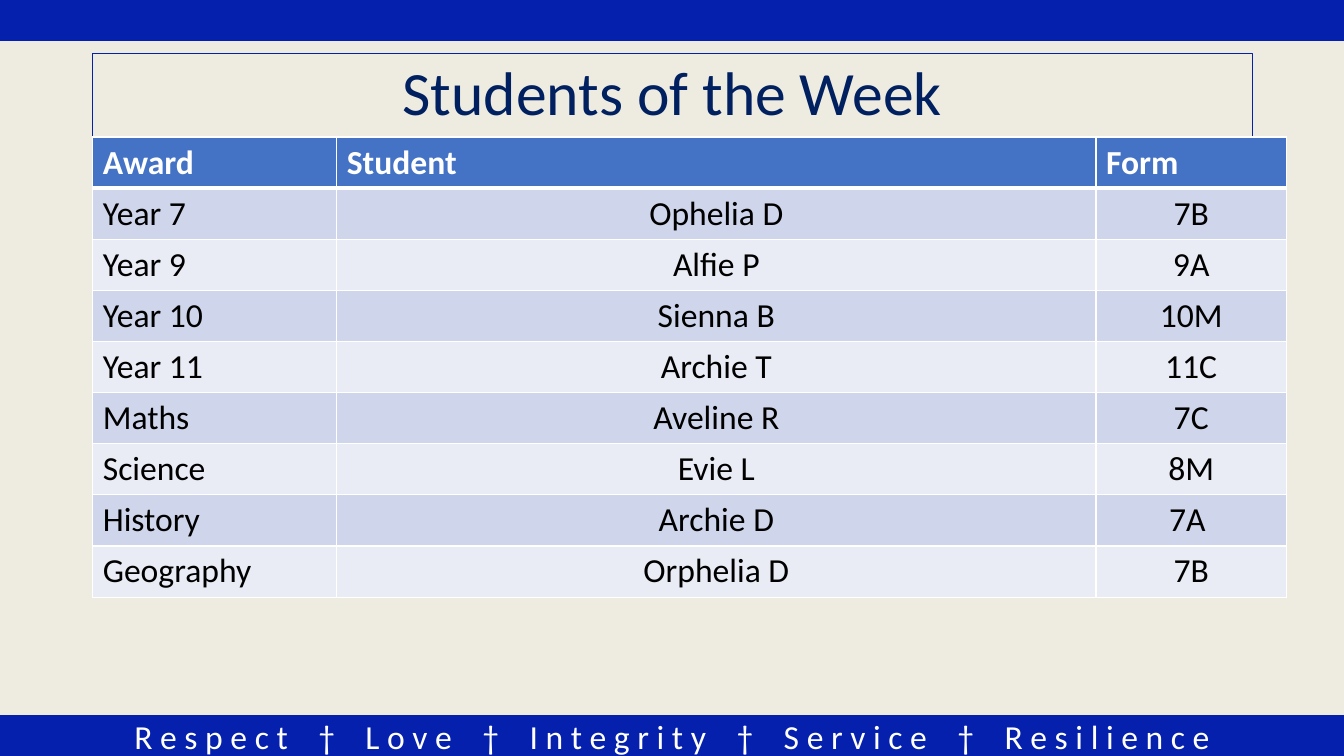
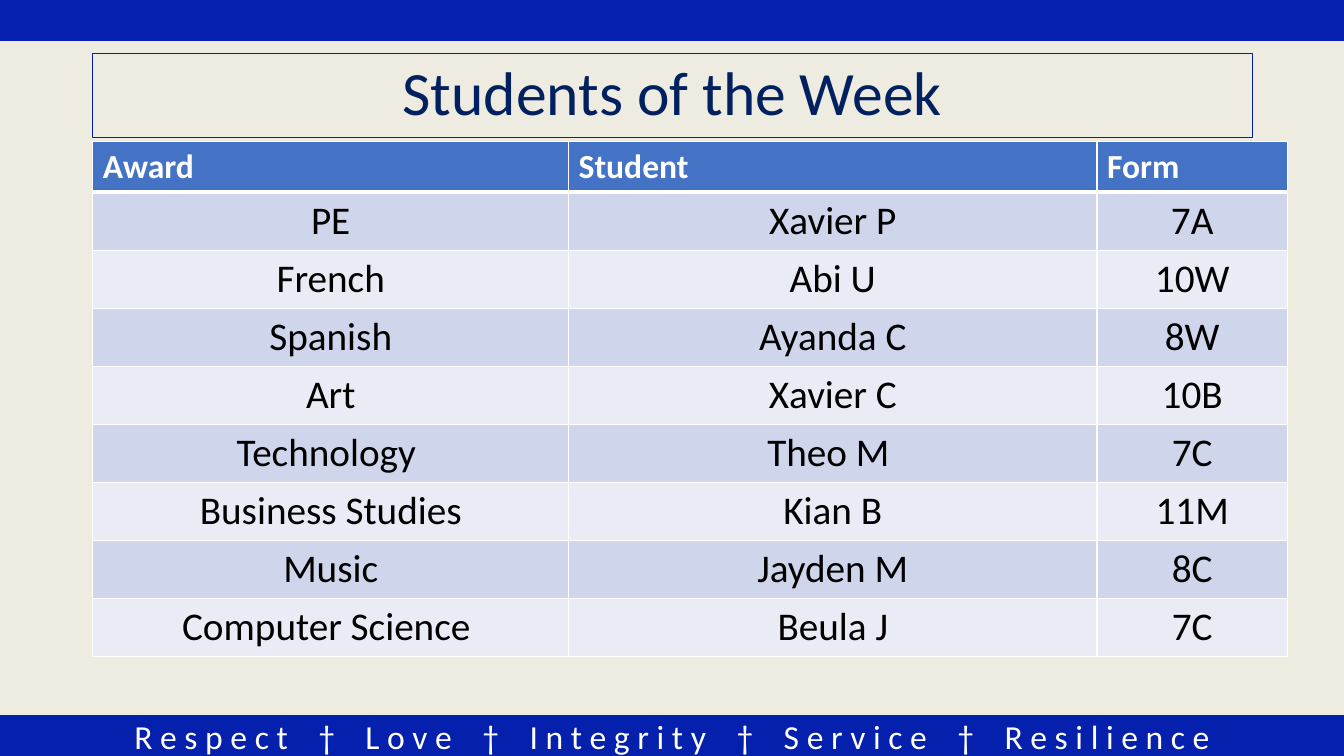
from dataclasses import dataclass

from lxml import etree
from pptx import Presentation
from pptx.dml.color import RGBColor
from pptx.enum.shapes import MSO_SHAPE
from pptx.enum.text import MSO_ANCHOR, MSO_AUTO_SIZE, PP_ALIGN
from pptx.oxml.ns import qn
from pptx.util import Inches, Pt

RECTANGLE = MSO_SHAPE.RECTANGLE
TOP, MIDDLE, BOTTOM = MSO_ANCHOR.TOP, MSO_ANCHOR.MIDDLE, MSO_ANCHOR.BOTTOM
LEFT, CENTER = PP_ALIGN.LEFT, PP_ALIGN.CENTER
TITLE_ONLY = 5

# Content
VALUES = ["Respect", "Love", "Integrity", "Service", "Resilience"]
TITLE = "Students of the Week"
HEADINGS = ("Award", "Student", "Form")
AWARD_SLIDES = [
    {
        "top": 1.36, "columns": (2.42, 7.53, 1.89), "row_height": 0.5,
        "size": 24, "award_align": LEFT,
        "winners": [
            ("Year 7", "Ophelia D", "7B"),
            ("Year 9", "Alfie P", "9A"),
            ("Year 10", "Sienna B", "10M"),
            ("Year 11", "Archie T", "11C"),
            ("Maths", "Aveline R", "7C"),
            ("Science", "Evie L", "8M"),
            ("History", "Archie D", "7A "),
            ("Geography", "Orphelia D", "7B"),
        ],
    },
    {
        "top": 1.4, "columns": (4.72, 5.24, 1.89), "row_height": 0.57,
        "size": 28, "award_align": CENTER,
        "winners": [
            ("PE", "Xavier P", "7A"),
            ("French", "Abi U", "10W"),
            ("Spanish", "Ayanda C", "8W"),
            ("Art", "Xavier C", "10B"),
            ("Technology ", "Theo M ", "7C"),
            ("Business Studies", "Kian B", "11M"),
            ("Music", "Jayden M", "8C"),
            ("Computer Science ", "Beula J", "7C"),
        ],
    },
]


@dataclass(frozen=True)
class Theme:
    font: str = "Calibri"
    background: str = "EEECE1"
    band: str = "0420AC"
    title: str = "002060"
    header: str = "4472C4"
    stripes: tuple = ("CFD5EA", "E9EBF5")
    light: str = "FFFFFF"
    dark: str = "000000"
    title_size: int = 44
    header_size: int = 24
    values_size: int = 24
    values_gap: int = 1630  # extra hundredths of a point beside each dagger


THEME = Theme()
SLIDE_WIDTH, SLIDE_HEIGHT = 13.33, 7.5
BAND_HEIGHT = 0.4
MARGIN_LEFT = 0.92
HEADER_HEIGHT = 0.5
WINNER_CELL = {
    "vertical_anchor": BOTTOM,
    "margin_left": Inches(0.01), "margin_top": Inches(0.01),
    "margin_right": Inches(0.01), "margin_bottom": Inches(0.05),
}


def rgb(color):
    return RGBColor.from_string(color)


def apply(target, values):
    for name, value in values.items():
        setattr(target, name, value)


def style_font(font, size, color, bold=False):
    apply(font, {"name": THEME.font, "size": Pt(size), "bold": bold})
    font.color.rgb = rgb(color)


def paint(fill, color):
    fill.solid()
    fill.fore_color.rgb = rgb(color)


def add_band(slide, layout, top):
    """Draw a full-width band and hand it over to the shared layout."""
    band = slide.shapes.add_shape(RECTANGLE, 0, Inches(top),
                                  Inches(SLIDE_WIDTH), Inches(BAND_HEIGHT))
    band.shadow.inherit = False
    paint(band.fill, THEME.band)
    paint(band.line.fill, THEME.band)
    band.line.width = Pt(1)
    layout.shapes.element.append(band.element)
    return band


def write_values(band):
    band.text_frame.vertical_anchor = MIDDLE
    line = band.text_frame.paragraphs[0]
    line.alignment = CENTER
    spaced_words = [" ".join(word) for word in VALUES]
    pieces = [spaced_words[0]]
    for word in spaced_words[1:]:
        pieces += [" ", "†", " ", word]
    for piece in pieces:
        run = line.add_run()
        run.text = piece
        style_font(run.font, THEME.values_size, THEME.light)
    # Widen the single spaces on both sides of each dagger
    for run in band.element.iter(qn("a:r")):
        if run.find(qn("a:t")).text == " ":
            run.find(qn("a:rPr")).set("spc", str(THEME.values_gap))


def add_title(slide):
    title = slide.shapes.title
    apply(title, {"left": Inches(MARGIN_LEFT), "top": Inches(0.53),
                  "width": Inches(11.5), "height": Inches(0.83)})
    paint(title.line.fill, THEME.band)
    title.line.width = Pt(0.75)
    title.text = TITLE
    apply(title.text_frame, {"vertical_anchor": MIDDLE, "word_wrap": True,
                             "auto_size": MSO_AUTO_SIZE.NONE})
    line = title.text_frame.paragraphs[0]
    apply(line, {"alignment": CENTER, "line_spacing": 0.9})
    style_font(line.runs[0].font, THEME.title_size, THEME.title)


def add_borders(cell, top, bottom):
    properties = cell._tc.get_or_add_tcPr()
    for side, width in (("L", 1), ("R", 1), ("T", top), ("B", bottom)):
        border = etree.SubElement(properties, qn(f"a:ln{side}"), w=str(Pt(width)))
        fill = etree.SubElement(border, qn("a:solidFill"))
        etree.SubElement(fill, qn("a:srgbClr"), val=THEME.light)


def add_awards(slide, awards):
    rows = [HEADINGS] + awards["winners"]
    heights = [HEADER_HEIGHT] + [awards["row_height"]] * len(awards["winners"])
    table = slide.shapes.add_table(
        len(rows), len(HEADINGS), Inches(MARGIN_LEFT), Inches(awards["top"]),
        Inches(sum(awards["columns"])), Inches(sum(heights))).table
    table.horz_banding = False
    for column, width in zip(table.columns, awards["columns"]):
        column.width = Inches(width)
    for row, height in zip(table.rows, heights):
        row.height = Inches(height)

    for r, texts in enumerate(rows):
        is_header = r == 0
        for c, text in enumerate(texts):
            cell = table.cell(r, c)
            cell.text = text
            line = cell.text_frame.paragraphs[0]
            # A heavier rule divides the headings from the winners
            add_borders(cell, top=3 if r == 1 else 1, bottom=3 if is_header else 1)
            if is_header:
                paint(cell.fill, THEME.header)
                line.alignment = LEFT
                style_font(line.runs[0].font, THEME.header_size, THEME.light, bold=True)
                continue
            paint(cell.fill, THEME.stripes[(r - 1) % 2])
            line.alignment = awards["award_align"] if c == 0 else CENTER
            style_font(line.runs[0].font, awards["size"], THEME.dark)
            apply(cell, WINNER_CELL if c else {"vertical_anchor": TOP})


def main():
    deck = Presentation()
    apply(deck, {"slide_width": Inches(SLIDE_WIDTH),
                 "slide_height": Inches(SLIDE_HEIGHT)})
    layout = deck.slide_layouts[TITLE_ONLY]
    paint(layout.background.fill, THEME.background)
    slides = [deck.slides.add_slide(layout) for _ in AWARD_SLIDES]

    # Shared bands
    write_values(add_band(slides[0], layout, SLIDE_HEIGHT - BAND_HEIGHT))
    add_band(slides[0], layout, 0)

    # Award slides
    for slide, awards in zip(slides, AWARD_SLIDES):
        add_title(slide)
        add_awards(slide, awards)
    deck.save("out.pptx")


if __name__ == "__main__":
    main()
